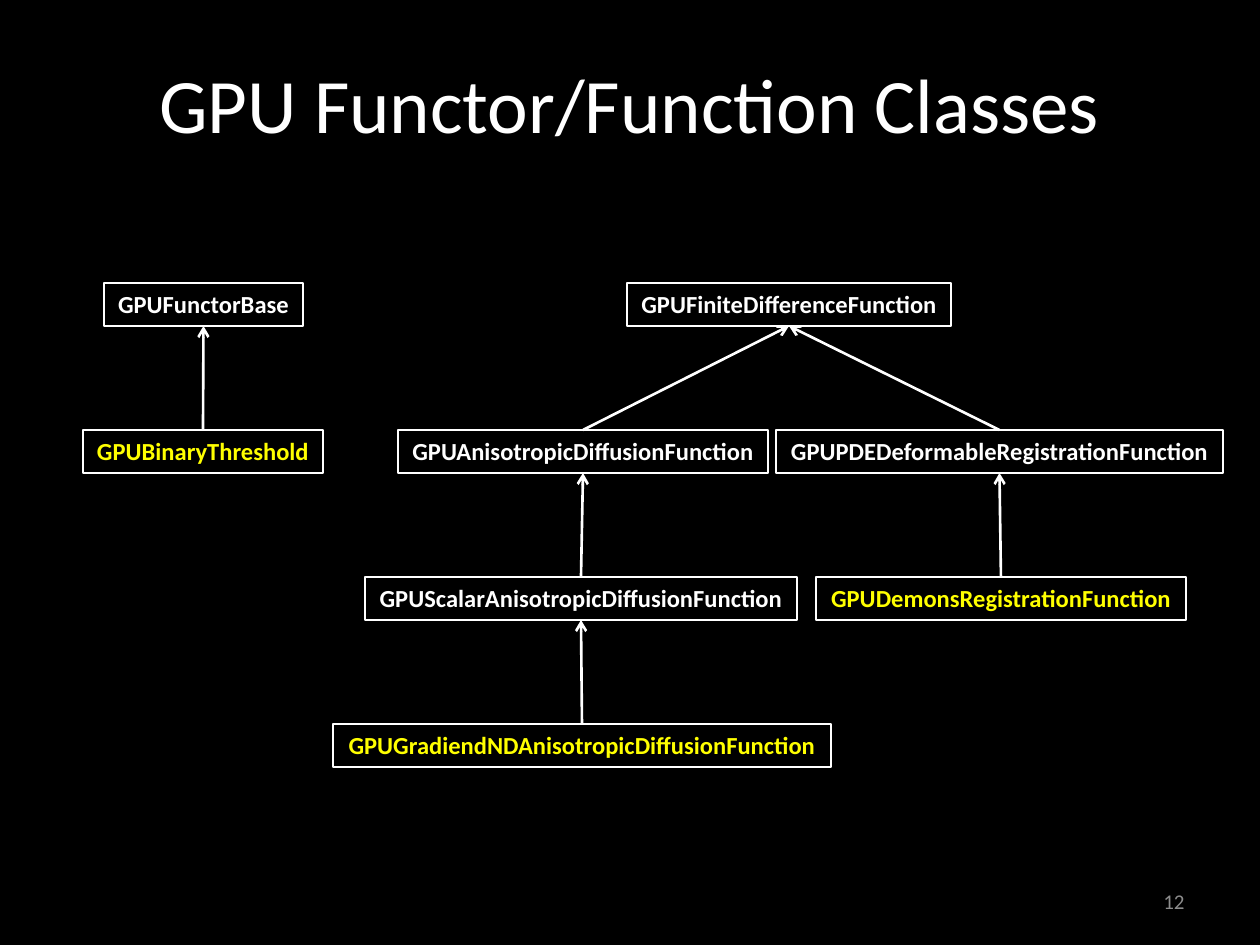
import dataclasses

import lxml.etree
import pptx
import pptx.dml.color
import pptx.enum.shapes
import pptx.enum.text
import pptx.oxml.ns
import pptx.util

PX = 914400 / 126
WHITE, YELLOW, GREY, BLACK = "FFFFFF", "FFFF00", "8C8C8C", "000000"
ALIGN = pptx.enum.text.PP_ALIGN
ANCHOR = pptx.enum.text.MSO_ANCHOR
ROW_TOP, ROW_STEP, BOX_HIGH = 283, 147, 43
TOP, BOTTOM = 0, 2  # connection sites


@dataclasses.dataclass(frozen=True)
class Node:
    name: str
    left: int
    row: int
    width: int
    base: str = ""
    color: str = WHITE


NODES = [
    Node("GPUFunctorBase", 104, 0, 199),
    Node("GPUBinaryThreshold", 83, 1, 240, "GPUFunctorBase", YELLOW),
    Node("GPUFiniteDifferenceFunction", 627, 0, 324),
    Node("GPUAnisotropicDiffusionFunction", 398, 1, 370,
         "GPUFiniteDifferenceFunction"),
    Node("GPUPDEDeformableRegistrationFunction", 776, 1, 447,
         "GPUFiniteDifferenceFunction"),
    Node("GPUScalarAnisotropicDiffusionFunction", 365, 2, 432,
         "GPUAnisotropicDiffusionFunction"),
    Node("GPUGradiendNDAnisotropicDiffusionFunction", 333, 3, 498,
         "GPUScalarAnisotropicDiffusionFunction", YELLOW),
    Node("GPUDemonsRegistrationFunction", 816, 2, 370,
         "GPUPDEDeformableRegistrationFunction", YELLOW),
]


def px(count: int) -> int:
    return round(count * PX)


def rgb(code: str) -> pptx.dml.color.RGBColor:
    return pptx.dml.color.RGBColor.from_string(code)


def write(shape, text: str, *, size: int, color: str = WHITE,
          bold: bool = False, align=ALIGN.CENTER, anchor=ANCHOR.MIDDLE,
          wrap: bool = True) -> None:
    frame = shape.text_frame
    frame.word_wrap = wrap
    frame.vertical_anchor = anchor
    para = frame.paragraphs[0]
    para.alignment = align
    run = para.add_run()
    run.text = text
    font = run.font
    font.name, font.size, font.bold = "Calibri", pptx.util.Pt(size), bold
    font.color.rgb = rgb(color)


def draw_box(slide, node: Node):
    box = slide.shapes.add_shape(
        pptx.enum.shapes.MSO_SHAPE.RECTANGLE, px(node.left),
        px(ROW_TOP + node.row * ROW_STEP), px(node.width), px(BOX_HIGH))
    box.shadow.inherit = False
    box.fill.background()
    box.line.color.rgb = rgb(WHITE)
    box.line.width = pptx.util.Pt(0.75)
    write(box, node.name, size=14, color=node.color, bold=True,
          anchor=ANCHOR.TOP, wrap=False)
    box.text_frame.auto_size = pptx.enum.text.MSO_AUTO_SIZE.SHAPE_TO_FIT_TEXT
    return box


def draw_link(slide, base, child) -> None:
    link = slide.shapes.add_connector(
        pptx.enum.shapes.MSO_CONNECTOR.STRAIGHT, 0, 0, 0, 0)
    link.begin_connect(base, BOTTOM)
    link.end_connect(child, TOP)
    link.line.color.rgb = rgb(WHITE)
    link.line.width = pptx.util.Pt(1.5)
    # Open arrowhead at the base class, and no shadow
    props = link.element.spPr
    qn = pptx.oxml.ns.qn
    lxml.etree.SubElement(props.get_or_add_ln(), qn("a:headEnd"), type="arrow")
    lxml.etree.SubElement(props, qn("a:effectLst"))


def main() -> None:
    deck = pptx.Presentation()
    deck.slide_width, deck.slide_height = px(1260), px(945)
    slide = deck.slides.add_slide(deck.slide_layouts.get_by_name("Title Only"))
    slide.background.fill.solid()
    slide.background.fill.fore_color.rgb = rgb(BLACK)

    # Title
    title = slide.shapes.title
    title.left, title.top = px(63), px(38)
    title.width, title.height = px(1134), px(130)
    write(title, "GPU Functor/Function Classes", size=44)

    # Slide number
    page = slide.shapes.add_textbox(px(903), px(876), px(294), px(50))
    write(page, "12", size=12, color=GREY, align=ALIGN.RIGHT)

    # Class boxes, then the links from each base to its child
    boxes = {node.name: draw_box(slide, node) for node in NODES}
    for node in NODES:
        if node.base:
            draw_link(slide, boxes[node.base], boxes[node.name])

    deck.save("out.pptx")


if __name__ == "__main__":
    main()
